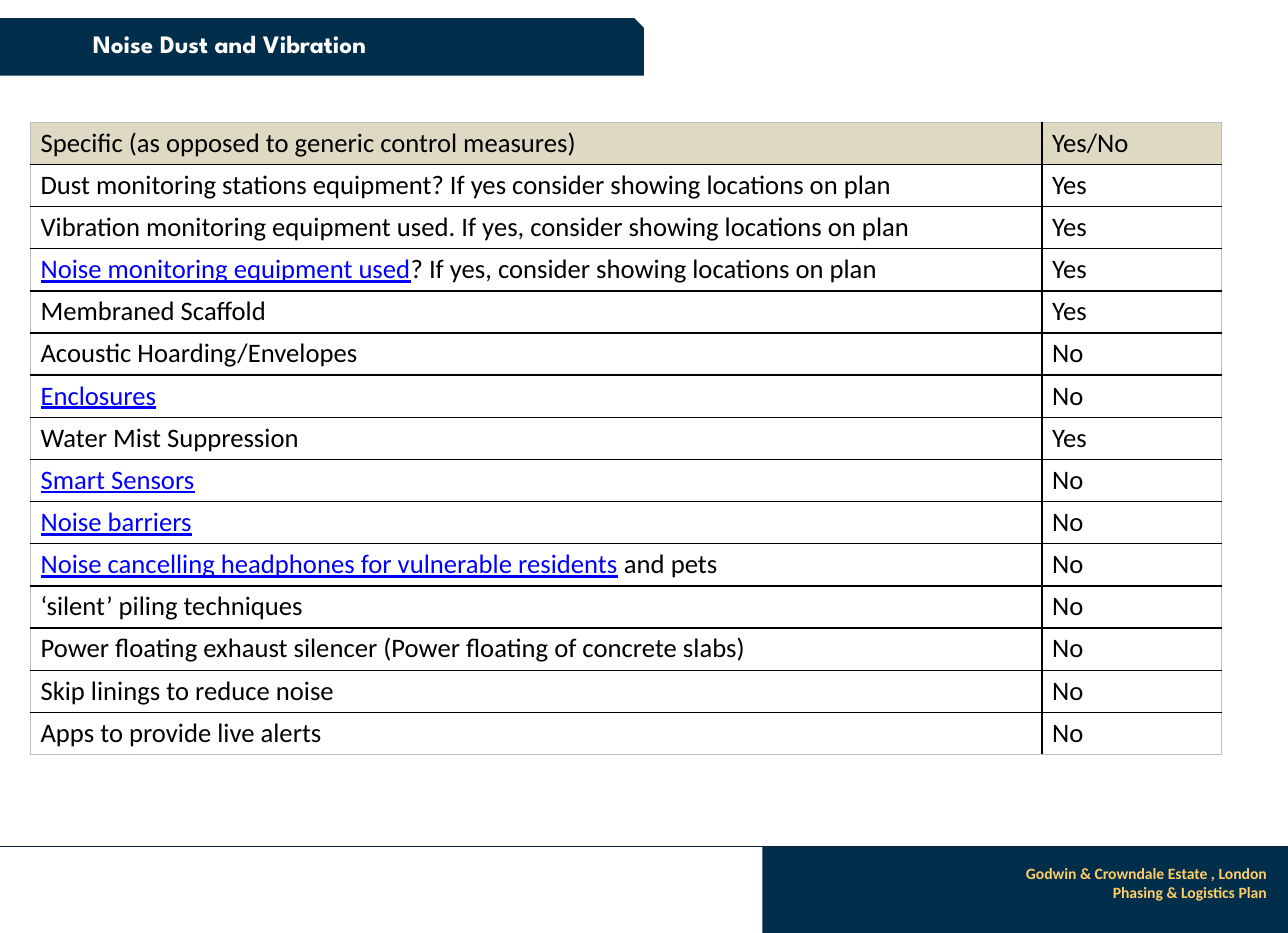
from dataclasses import dataclass

from lxml import etree
from pptx import Presentation
from pptx.dml.color import RGBColor
from pptx.enum.shapes import MSO_CONNECTOR, MSO_SHAPE
from pptx.enum.text import MSO_ANCHOR, MSO_AUTO_SIZE, PP_ALIGN
from pptx.oxml.ns import qn
from pptx.util import Pt

RECT = MSO_SHAPE.RECTANGLE
SNIPPED = MSO_SHAPE.SNIP_1_RECTANGLE
STRAIGHT = MSO_CONNECTOR.STRAIGHT
MIDDLE = MSO_ANCHOR.MIDDLE
NO_FIT = MSO_AUTO_SIZE.NONE
CENTER = PP_ALIGN.CENTER
RIGHT = PP_ALIGN.RIGHT


@dataclass(frozen=True)
class Theme:
    navy: str = "012E4B"
    rule: str = "0F243E"
    gold: str = "FFCC66"
    white: str = "FFFFFF"
    black: str = "000000"
    link: str = "0000FF"
    header: str = "DDD9C3"
    frame: str = "BFBFBF"
    heading_font: str = "League Spartan"
    body_font: str = "Calibri"
    title_size: float = 16
    table_size: float = 17
    footer_size: float = 10


THEME = Theme()
WIDTH, HEIGHT = 822.24, 595.44
FOOTER_TOP = 540
ROW_HEIGHT = 26.92
COLUMNS = (645.8, 114.5)

HEADINGS = ("", "Specific (as opposed to generic control measures)", "Yes/No")
MEASURES = [
    ("", "Dust monitoring stations equipment? If yes consider showing locations on plan", "Yes"),
    ("", "Vibration monitoring equipment used. If yes, consider showing locations on plan", "Yes"),
    ("Noise monitoring equipment used", "? If yes, consider showing locations on plan", "Yes"),
    ("", "Membraned Scaffold", "Yes"),
    ("", "Acoustic Hoarding/Envelopes", "No"),
    ("Enclosures", "", "No"),
    ("", "Water Mist Suppression", "Yes"),
    ("Smart Sensors", "", "No"),
    ("Noise barriers", "", "No"),
    ("Noise cancelling headphones for vulnerable residents", " and pets", "No"),
    ("", "‘silent’ piling techniques", "No"),
    ("", "Power floating exhaust silencer (Power floating of concrete slabs)", "No"),
    ("", "Skip linings to reduce noise", "No"),
    ("", "Apps to provide live alerts", "No"),
]


def color(value):
    return RGBColor.from_string(value)


def format_run(r, font, size, value, bold=False, underline=False):
    r.font.name = font
    r.font.size = Pt(size)
    r.font.color.rgb = color(value)
    r.font.bold = bold
    r.font.underline = underline


def add_panel(slide, kind, left, top, width, height):
    sp = slide.shapes.add_shape(kind, Pt(left), Pt(top), Pt(width), Pt(height))
    sp.shadow.inherit = False
    sp.fill.solid()
    sp.fill.fore_color.rgb = color(THEME.navy)
    sp.line.fill.background()
    return sp


def add_rule(slide, top):
    line = slide.shapes.add_connector(STRAIGHT, Pt(0), Pt(top), Pt(WIDTH), Pt(top))
    line.line.color.rgb = color(THEME.rule)
    line.line.width = Pt(0.75)
    etree.SubElement(line.element.spPr, qn("a:effectLst"))


def set_title(slide, banner, text):
    title = slide.shapes.title
    banner.element.addnext(title.element)
    title.left, title.top, title.width, title.height = Pt(13), Pt(11.5), Pt(267), Pt(33)
    tf = title.text_frame
    tf.text = text
    tf.auto_size = NO_FIT
    tf.vertical_anchor = MIDDLE
    p = tf.paragraphs[0]
    p.alignment = CENTER
    format_run(p.runs[0], THEME.heading_font, THEME.title_size, THEME.white, bold=True)


def add_footer_text(slide, text):
    box = slide.shapes.add_textbox(Pt(491), Pt(548), Pt(324.7), Pt(31.7))
    tf = box.text_frame
    tf.word_wrap = True
    tf.text = text
    for p in tf.paragraphs:
        p.alignment = RIGHT
        format_run(p.runs[0], THEME.body_font, THEME.footer_size, THEME.gold, bold=True)


def add_border(cell, side, outer):
    ln = etree.SubElement(cell._tc.get_or_add_tcPr(), qn(f"a:ln{side}"))
    ln.set("w", str(Pt(0.5 if outer else 1)))
    fill = etree.SubElement(ln, qn("a:solidFill"))
    value = THEME.frame if outer else THEME.black
    etree.SubElement(fill, qn("a:srgbClr")).set("val", value)


def fill_cell(cell, linked, plain):
    cell.margin_left = cell.margin_right = Pt(6.5)
    cell.margin_top = cell.margin_bottom = Pt(2.9)
    p = cell.text_frame.paragraphs[0]
    for text, value in ((linked, THEME.link), (plain, THEME.black)):
        if text:
            r = p.add_run()
            r.text = text
            format_run(r, THEME.body_font, THEME.table_size, value,
                       underline=value == THEME.link)


def add_measures_table(slide, rows):
    frame = slide.shapes.add_table(len(rows), len(COLUMNS), Pt(19.4), Pt(78),
                                   Pt(sum(COLUMNS)), Pt(ROW_HEIGHT * len(rows)))
    table = frame.table
    table.first_row = False
    table.horz_banding = False
    for column, width in zip(table.columns, COLUMNS):
        column.width = Pt(width)
    last_row, last_column = len(rows) - 1, len(COLUMNS) - 1
    for i, (linked, plain, answer) in enumerate(rows):
        table.rows[i].height = Pt(ROW_HEIGHT)
        for j, texts in enumerate(((linked, plain), ("", answer))):
            cell = table.cell(i, j)
            fill_cell(cell, *texts)
            edges = {"L": j == 0, "R": j == last_column, "T": i == 0, "B": i == last_row}
            for side, outer in edges.items():
                add_border(cell, side, outer)
            if i == 0:
                cell.fill.solid()
                cell.fill.fore_color.rgb = color(THEME.header)
            else:
                cell.fill.background()


def main():
    prs = Presentation()
    prs.slide_width, prs.slide_height = Pt(WIDTH), Pt(HEIGHT)
    slide = prs.slides.add_slide(prs.slide_layouts[5])
    add_panel(slide, RECT, 486.7, FOOTER_TOP, WIDTH - 486.7, HEIGHT - FOOTER_TOP)
    banner = add_panel(slide, SNIPPED, 0, 11.5, 411, 36.7)
    set_title(slide, banner, "Noise Dust and Vibration")
    add_rule(slide, FOOTER_TOP)
    add_footer_text(slide, "Godwin & Crowndale Estate , London\nPhasing & Logistics Plan")
    add_measures_table(slide, [HEADINGS, *MEASURES])
    prs.save("out.pptx")


if __name__ == "__main__":
    main()
